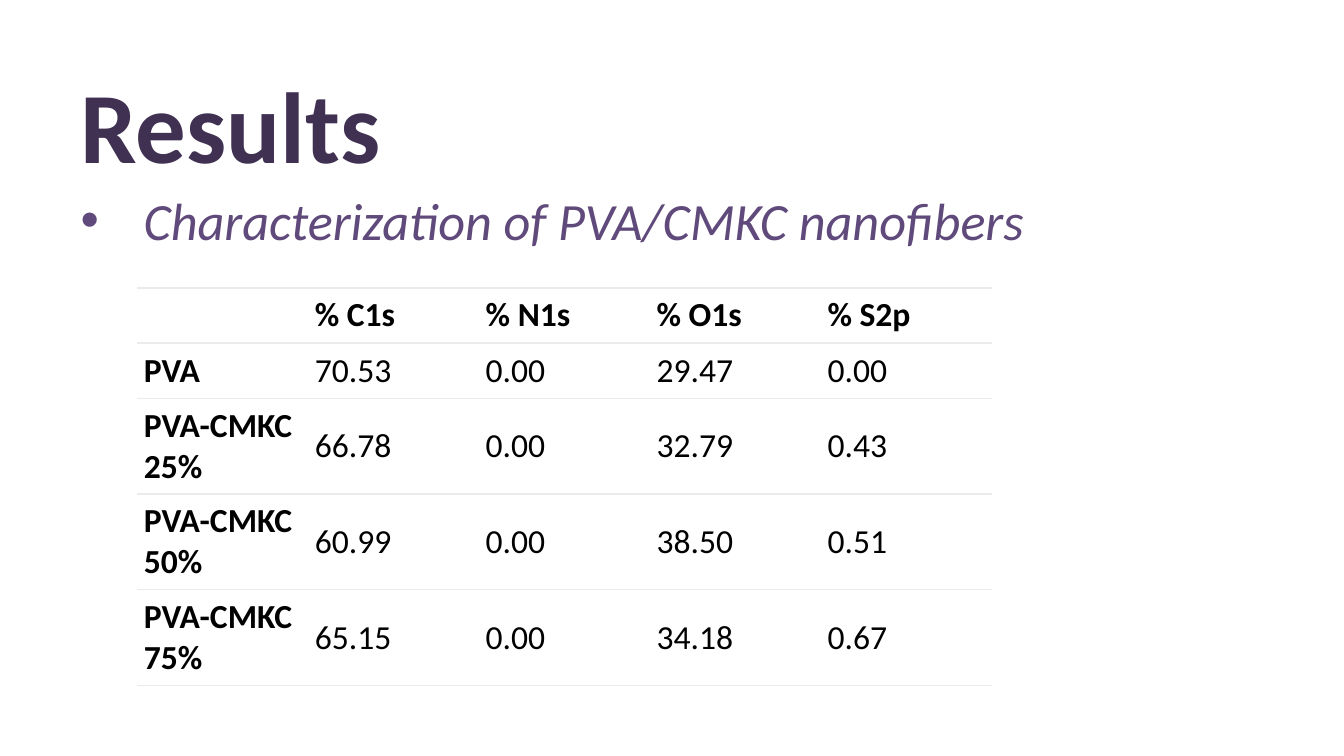
from dataclasses import dataclass

from lxml import etree
from pptx import Presentation
from pptx import util as u
from pptx.dml import color
from pptx.enum import text
from pptx.oxml import ns


@dataclass(frozen=True)
class Theme:
    font: str = "Calibri"
    title_color: str = "403152"
    body_color: str = "604A7B"
    table_color: str = "000000"
    rule_color: str = "EBEBEB"
    title_size: int = 54
    body_size: int = 28
    table_size: int = 18
    rule_width: float = 0.75


THEME = Theme()
ELEMENTS = ["C1s", "N1s", "O1s", "S2p"]
SAMPLES = {
    "PVA": [70.53, 0.00, 29.47, 0.00],
    "PVA-CMKC 25%": [66.78, 0.00, 32.79, 0.43],
    "PVA-CMKC 50%": [60.99, 0.00, 38.50, 0.51],
    "PVA-CMKC 75%": [65.15, 0.00, 34.18, 0.67],
}
COLUMN_WIDTH = 3.23
SINGLE_ROW, DOUBLE_ROW = 1.04, 1.81


def format_text(para, size, rgb, bold=False, italic=False):
    for span in para.runs:
        font = span.font
        font.name = THEME.font
        font.size = u.Pt(size)
        font.color.rgb = color.RGBColor.from_string(rgb)
        font.bold = bold
        font.italic = italic


def fill_placeholder(box, words, left, top, width, height):
    box.left, box.top = u.Cm(left), u.Cm(top)
    box.width, box.height = u.Cm(width), u.Cm(height)
    frame = box.text_frame
    frame.text = words
    frame.word_wrap = True
    frame.auto_size = text.MSO_AUTO_SIZE.NONE
    para = frame.paragraphs[0]
    para.alignment = text.PP_ALIGN.LEFT
    para.space_before = u.Pt(0)
    return para


def add_bullet(para, indent):
    properties = para._p.get_or_add_pPr()
    properties.set("marL", str(u.Cm(indent)))
    properties.set("indent", str(-u.Cm(indent)))
    etree.SubElement(properties, ns.qn("a:buChar")).set("char", "•")


def rule_cell(cell):
    properties = cell._tc.get_or_add_tcPr()
    for side in ("lnL", "lnR", "lnT", "lnB"):
        line = etree.SubElement(properties, ns.qn(f"a:{side}"))
        if side in ("lnL", "lnR"):
            etree.SubElement(line, ns.qn("a:noFill"))
        else:
            line.set("w", str(u.Pt(THEME.rule_width)))
            fill = etree.SubElement(line, ns.qn("a:solidFill"))
            etree.SubElement(fill, ns.qn("a:srgbClr")).set("val", THEME.rule_color)


def format_cell(cell, words, bold, anchor):
    rule_cell(cell)
    cell.fill.background()
    cell.margin_left = cell.margin_right = u.Cm(0.13)
    cell.margin_top = cell.margin_bottom = u.Cm(0.13)
    cell.vertical_anchor = anchor
    cell.text_frame.text = words
    format_text(cell.text_frame.paragraphs[0], THEME.table_size, THEME.table_color, bold)


def add_composition_table(slide, left, top):
    rows = [[""] + [f"% {element}" for element in ELEMENTS]]
    rows += [[name] + [f"{share:.2f}" for share in shares] for name, shares in SAMPLES.items()]
    heights = [DOUBLE_ROW if " " in row[0] else SINGLE_ROW for row in rows]
    table = slide.shapes.add_table(
        len(rows), len(rows[0]), u.Cm(left), u.Cm(top),
        u.Cm(COLUMN_WIDTH * len(rows[0])), u.Cm(sum(heights)),
    ).table
    table.horz_banding = False
    table.first_row = False
    for column in table.columns:
        column.width = u.Cm(COLUMN_WIDTH)
    for r, row in enumerate(rows):
        table.rows[r].height = u.Cm(heights[r])
        anchor = text.MSO_ANCHOR.MIDDLE if r else text.MSO_ANCHOR.TOP
        for c, words in enumerate(row):
            format_cell(table.cell(r, c), words, r == 0 or c == 0, anchor)


def main():
    deck = Presentation()
    deck.slide_width, deck.slide_height = u.Cm(25.4), u.Cm(14.28)
    slide = deck.slides.add_slide(deck.slide_layouts[1])
    title = fill_placeholder(slide.shapes.title, "Results", 1.27, 1.27, 17.37, 2.13)
    slide.shapes.title.text_frame.vertical_anchor = text.MSO_ANCHOR.MIDDLE
    format_text(title, THEME.title_size, THEME.title_color, bold=True)
    topic = fill_placeholder(
        slide.placeholders[1], "Characterization of PVA/CMKC nanofibers", 1.27, 3.43, 23.32, 9.91
    )
    add_bullet(topic, 1.19)
    format_text(topic, THEME.body_size, THEME.body_color, italic=True)
    add_composition_table(slide, 2.59, 5.44)
    deck.save("out.pptx")


if __name__ == "__main__":
    main()
